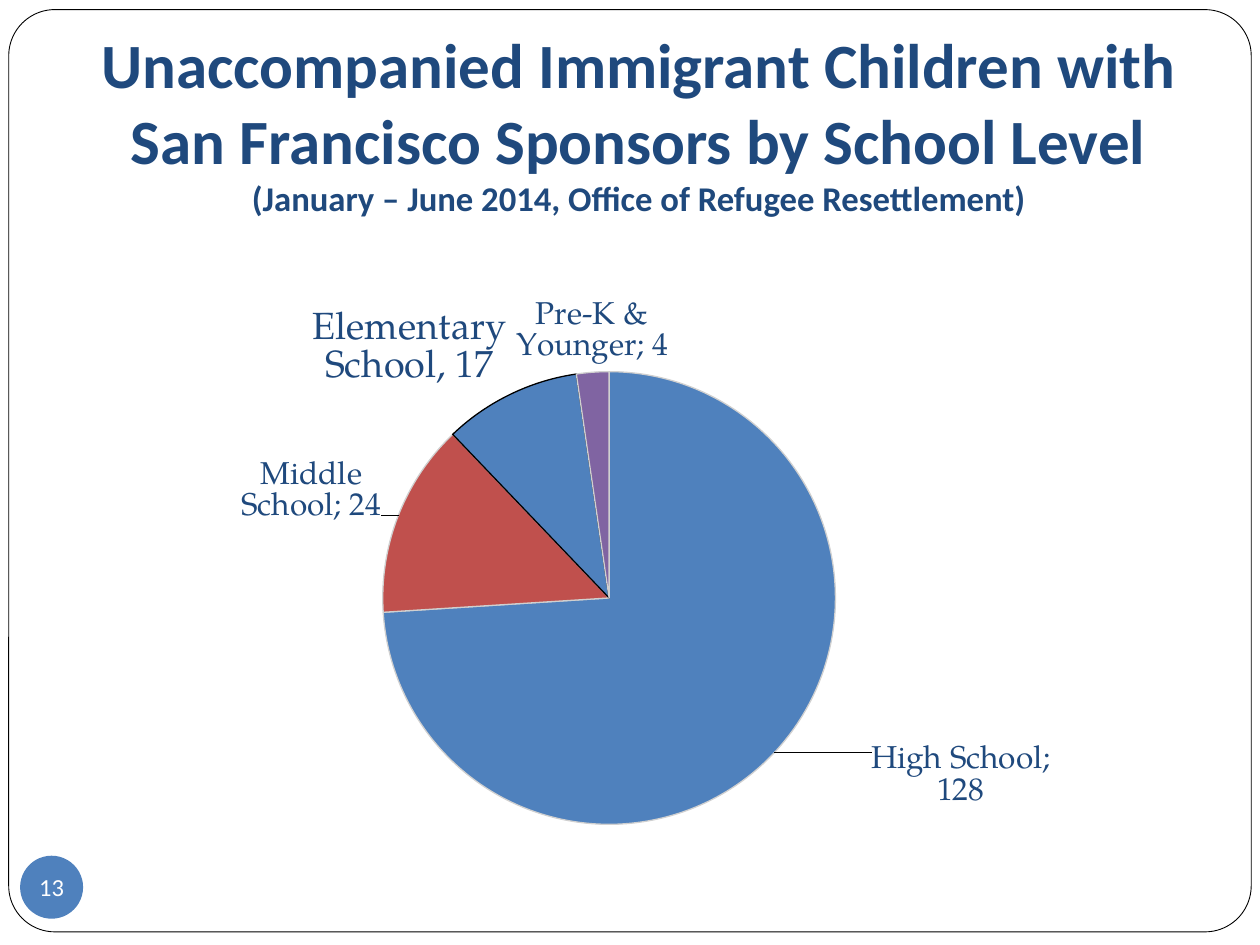
import pptx
import pptx.chart.data
import pptx.dml.color
import pptx.enum.chart
import pptx.enum.shapes
import pptx.enum.text
import pptx.oxml
import pptx.oxml.ns
import pptx.util

Pt = pptx.util.Pt
RGBColor = pptx.dml.color.RGBColor

WHITE = RGBColor(0xFF, 0xFF, 0xFF)
BLACK = RGBColor(0x00, 0x00, 0x00)
NAVY = RGBColor(0x1F, 0x49, 0x7D)
BLUE = RGBColor(0x4F, 0x81, 0xBD)
RED = RGBColor(0xC0, 0x50, 0x4D)
PURPLE = RGBColor(0x80, 0x64, 0xA2)
GREY = RGBColor(0xD0, 0xD0, 0xD0)

TITLE_FONT = "Calibri"
CHART_FONT = "TeX Gyre Pagella"
LEVELS = [
    ("High School", 128, BLUE),
    ("Middle School", 24, RED),
    ("Elementary School", 17, BLUE),
    ("Pre-K & Younger", 4, PURPLE),
]
ELEMENTARY = 2
LABEL_SHIFTS = {0: (0.09, -0.02), 1: (-0.01, 0.02)}
PIE_AREA = {"x": 0.27, "y": 0.15, "w": 0.45, "h": 0.77}


def style_font(font, name, size, color, bold=False):
    font.name = name
    font.size = Pt(size)
    font.bold = bold
    font.color.rgb = color


def add_span(para, text, size, color, bold=False):
    span = para.add_run()
    span.text = text
    style_font(span.font, TITLE_FONT, size, color, bold)


def set_margins(frame, left, top, right, bottom):
    frame.margin_left, frame.margin_top = Pt(left), Pt(top)
    frame.margin_right, frame.margin_bottom = Pt(right), Pt(bottom)


def add_plain_shape(page, kind, left, top, width, height, fill):
    shape = page.shapes.add_shape(kind, Pt(left), Pt(top), Pt(width), Pt(height))
    shape.shadow.inherit = False
    shape.fill.solid()
    shape.fill.fore_color.rgb = fill
    shape.line.fill.background()
    return shape


def add_frame(page):
    kind = pptx.enum.shapes.MSO_SHAPE.ROUNDED_RECTANGLE
    frame = add_plain_shape(page, kind, 5, 5.5, 710, 527, WHITE)
    frame.adjustments[0] = 0.05
    frame.line.color.rgb = BLACK
    frame.line.width = Pt(0.5)


def add_title(page):
    box = page.shapes.add_textbox(Pt(39.5), Pt(36), Pt(651), Pt(96))
    frame = box.text_frame
    frame.word_wrap = True
    frame.vertical_anchor = pptx.enum.text.MSO_ANCHOR.BOTTOM
    set_margins(frame, 7.2, 3.6, 7.2, 7.2)
    para = frame.paragraphs[0]
    para.alignment = pptx.enum.text.PP_ALIGN.CENTER
    heading = "Unaccompanied Immigrant Children with San Francisco Sponsors by School Level"
    add_span(para, heading, 36, NAVY, True)
    para.add_line_break()
    add_span(para, "(January – June 2014, Office of Refugee Resettlement)", 19.8, NAVY, True)


def add_page_number(page):
    kind = pptx.enum.shapes.MSO_SHAPE.OVAL
    badge = add_plain_shape(page, kind, 11.5, 489, 36, 36, BLUE)
    frame = badge.text_frame
    frame.word_wrap = False
    frame.vertical_anchor = pptx.enum.text.MSO_ANCHOR.MIDDLE
    set_margins(frame, 0, 0, 0, 0)
    para = frame.paragraphs[0]
    para.alignment = pptx.enum.text.PP_ALIGN.CENTER
    add_span(para, "13", 14, WHITE)


def make_layout(values, inner=False):
    target = '<c:layoutTarget val="inner"/><c:xMode val="edge"/><c:yMode val="edge"/>'
    parts = "".join(f'<c:{key} val="{value}"/>' for key, value in values.items())
    return pptx.oxml.parse_xml(
        f'<c:layout {pptx.oxml.ns.nsdecls("c")}><c:manualLayout>'
        f'{target if inner else ""}{parts}</c:manualLayout></c:layout>'
    )


def place_pie(chart):
    area = chart.plots[0]._element.getparent()
    for old in area.findall(pptx.oxml.ns.qn("c:layout")):
        area.remove(old)
    area.insert(0, make_layout(PIE_AREA, inner=True))


def color_slices(series):
    for index, (_, _, color) in enumerate(LEVELS):
        slice_format = series.points[index].format
        slice_format.fill.solid()
        slice_format.fill.fore_color.rgb = color
        slice_format.line.color.rgb = BLACK if index == ELEMENTARY else GREY
        slice_format.line.width = Pt(0.75)


def label_slices(series):
    outside = pptx.enum.chart.XL_LABEL_POSITION.OUTSIDE_END
    labels = series.data_labels
    labels.show_value = True
    labels.show_category_name = True
    labels.position = outside
    style_font(labels.font, CHART_FONT, 18, NAVY)

    for index in LABEL_SHIFTS:
        label = series.points[index].data_label
        style_font(label.font, CHART_FONT, 18, NAVY)
        label.position = outside

    custom = series.points[ELEMENTARY].data_label
    span = custom.text_frame.paragraphs[0].add_run()
    span.text = "Elementary School, 17"
    style_font(span.font, CHART_FONT, 21.6, NAVY)
    custom.position = outside

    for node in series._element.xpath(".//c:showCatName"):
        node.set("val", "1")
    for node in series._element.xpath(".//c:showBubbleSize"):
        separator = pptx.oxml.parse_xml(
            f'<c:separator {pptx.oxml.ns.nsdecls("c")}>; </c:separator>'
        )
        node.addnext(separator)
    for index, (x, y) in LABEL_SHIFTS.items():
        marker = series._element.xpath(f'.//c:dLbl/c:idx[@val="{index}"]')[0]
        marker.addnext(make_layout({"x": x, "y": y}))


def add_pie(page):
    data = pptx.chart.data.CategoryChartData()
    data.categories = [name for name, _, _ in LEVELS]
    data.add_series("Series 1", [count for _, count, _ in LEVELS])
    kind = pptx.enum.chart.XL_CHART_TYPE.PIE
    chart = page.shapes.add_chart(kind, Pt(60), Pt(162), Pt(582), Pt(336), data).chart
    chart.has_legend = False
    chart.has_title = False
    style_font(chart.font, CHART_FONT, 18, BLACK)
    chart.plots[0].vary_by_categories = True
    place_pie(chart)
    series = chart.plots[0].series[0]
    color_slices(series)
    label_slices(series)


def main():
    deck = pptx.Presentation()
    deck.slide_width, deck.slide_height = Pt(720), Pt(540)
    page = deck.slides.add_slide(deck.slide_layouts[6])
    add_frame(page)
    add_title(page)
    add_page_number(page)
    add_pie(page)
    deck.save("out.pptx")


if __name__ == "__main__":
    main()
